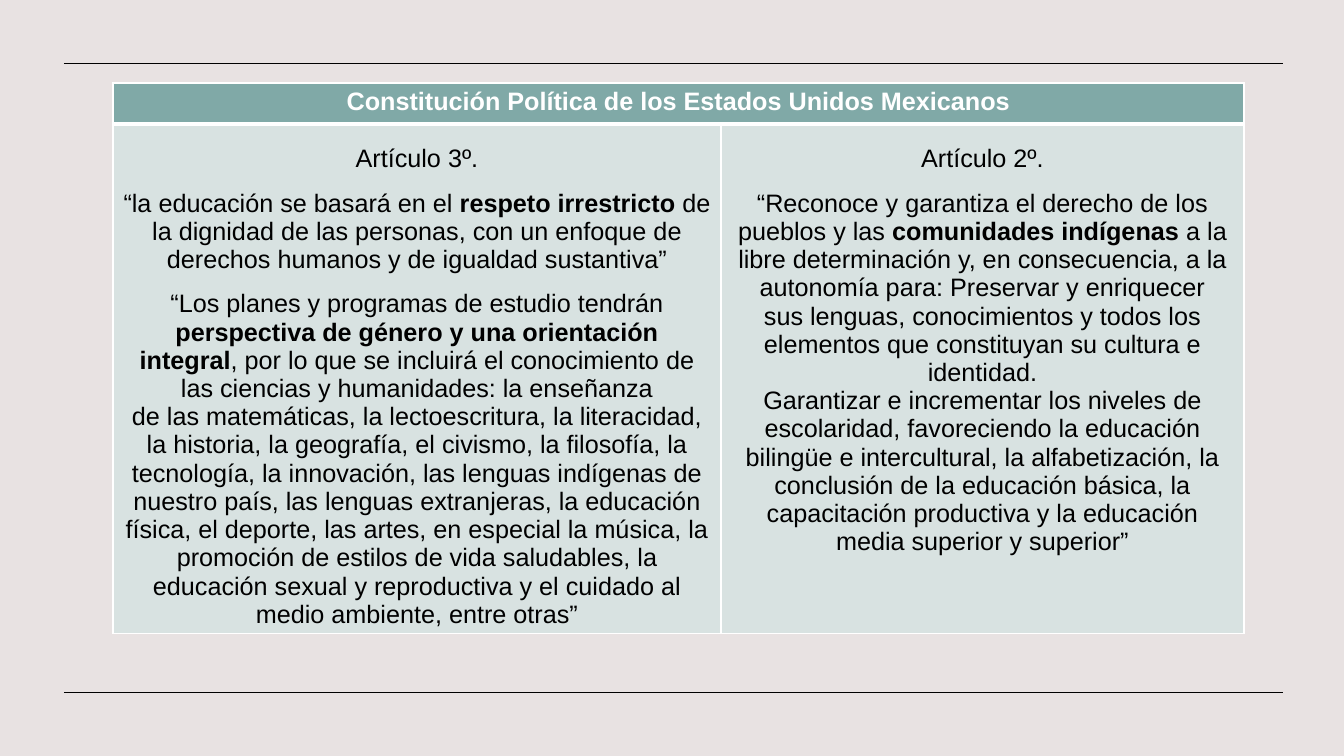
"""Build a slide comparing two articles of the Mexican constitution."""
from typing import NamedTuple

from lxml import etree
from pptx import Presentation
from pptx import util as u
from pptx.dml.color import RGBColor
from pptx.enum import shapes, text
from pptx.oxml.ns import qn

COLORS = {"background": "E8E2E2", "header": "80A9A7", "body": "D8E2E1",
          "white": "FFFFFF", "black": "000000"}
SLIDE_WIDTH, SLIDE_HEIGHT = 1344, 756
EMU_PER_PX = 12192000 / SLIDE_WIDTH
COLUMN_WIDTHS = (608, 523)
ROW_HEIGHTS = (41, 508)


class Line(NamedTuple):
    """A paragraph as alternating regular and bold pieces."""
    pieces: tuple[str, ...]
    gap: float = 0


class Rule(NamedTuple):
    """A horizontal rule."""
    left: int
    right: int
    y: int


GAP = 11.5
RULES = [Rule(64, 1283, 63), Rule(64, 1283, 692)]
HEADING = [Line(("", "Constitución Política de los Estados Unidos Mexicanos"))]
ARTICLES = [
    [
        Line(("Artículo 3º.",)),
        Line(("“la educación se basará en el ", "respeto irrestricto ",
              "de la dignidad de las personas, con un enfoque de derechos humanos "
              "y de igualdad sustantiva”"), GAP),
        Line(("“Los planes y programas de estudio tendrán ",
              "perspectiva de género y una orientación"), GAP),
        Line(("", "integral", ", por lo que se incluirá el conocimiento de las ciencias "
              "y humanidades: la enseñanza")),
        Line(("de las matemáticas, la lectoescritura, la literacidad, la historia, "
              "la geografía, el civismo, la filosofía, la tecnología, la innovación, "
              "las lenguas indígenas de nuestro país, las lenguas extranjeras, "
              "la educación física, el deporte, las artes, en especial la música, "
              "la promoción de estilos de vida saludables, la educación sexual y "
              "reproductiva y el cuidado al medio ambiente, entre otras”",)),
    ],
    [
        Line(("Artículo 2º.",)),
        Line(("“Reconoce y garantiza el derecho de los pueblos y las ",
              "comunidades indígenas ", "a la"), GAP),
        Line(("libre determinación y, en consecuencia, a la autonomía para: "
              "Preservar y enriquecer",)),
        Line(("sus lenguas, conocimientos y todos los elementos que constituyan "
              "su cultura e identidad.",)),
        Line(("Garantizar e incrementar los niveles de escolaridad, favoreciendo "
              "la educación",)),
        Line(("bilingüe e intercultural, la alfabetización, la conclusión de "
              "la educación básica, la",)),
        Line(("capacitación productiva y la educación media superior y superior”",)),
    ],
]


def px(length: int) -> u.Emu:
    """Convert px to EMU."""
    return u.Emu(round(length * EMU_PER_PX))


def rgb(name: str) -> RGBColor:
    """Look up a named colour."""
    return RGBColor.from_string(COLORS[name])


def write_text(frame, lines: list[Line], *, color: str, size: int = 18,
               font: str = "Arial") -> None:
    """Write centred paragraphs with alternating bold pieces."""
    for index, line in enumerate(lines):
        paragraph = frame.add_paragraph() if index else frame.paragraphs[0]
        paragraph.alignment = text.PP_ALIGN.CENTER
        paragraph.space_before = u.Pt(line.gap)
        for position, piece in enumerate(line.pieces):
            if not piece:
                continue
            run = paragraph.add_run()
            run.text = piece
            run.font.name = font
            run.font.size = u.Pt(size)
            run.font.bold = position % 2 == 1
            run.font.color.rgb = rgb(color)


def style_cell(cell, *, fill: str, top: int = 1, bottom: int = 1) -> None:
    """Give a cell white borders and a solid fill."""
    properties = cell._tc.get_or_add_tcPr()
    for side, points in (("L", 1), ("R", 1), ("T", top), ("B", bottom)):
        border = etree.SubElement(properties, qn(f"a:ln{side}"), w=str(u.Pt(points)))
        solid = etree.SubElement(border, qn("a:solidFill"))
        etree.SubElement(solid, qn("a:srgbClr"), val=COLORS["white"])
    cell.fill.solid()
    cell.fill.fore_color.rgb = rgb(fill)


def draw_rule(slide, rule: Rule) -> None:
    """Draw a thin black rule."""
    connector = slide.shapes.add_connector(
        shapes.MSO_CONNECTOR.STRAIGHT,
        px(rule.left), px(rule.y), px(rule.right), px(rule.y))
    connector.line.color.rgb = rgb("black")
    connector.line.width = u.Pt(0.5)
    etree.SubElement(connector._element.spPr, qn("a:effectLst"))


def draw_table(slide) -> None:
    """Draw the heading and the two article columns."""
    table = slide.shapes.add_table(
        2, 2, px(113), px(83), px(sum(COLUMN_WIDTHS)), px(sum(ROW_HEIGHTS))).table
    table.horz_banding = False
    for row, height in zip(table.rows, ROW_HEIGHTS):
        row.height = px(height)
    for index, (width, article) in enumerate(zip(COLUMN_WIDTHS, ARTICLES)):
        table.columns[index].width = px(width)
        style_cell(table.cell(0, index), fill="header", bottom=3)
        body = table.cell(1, index)
        style_cell(body, fill="body", top=3)
        body.margin_top = px(21)
        write_text(body.text_frame, article, color="black")
    heading = table.cell(0, 0)
    heading.merge(table.cell(0, 1))
    write_text(heading.text_frame, HEADING, color="white")


def main() -> None:
    """Create and save the presentation."""
    presentation = Presentation()
    presentation.slide_width = px(SLIDE_WIDTH)
    presentation.slide_height = px(SLIDE_HEIGHT)
    slide = presentation.slides.add_slide(presentation.slide_layouts[6])
    slide.background.fill.solid()
    slide.background.fill.fore_color.rgb = rgb("background")
    for rule in RULES:
        draw_rule(slide, rule)
    draw_table(slide)
    presentation.save("out.pptx")


if __name__ == "__main__":
    main()
